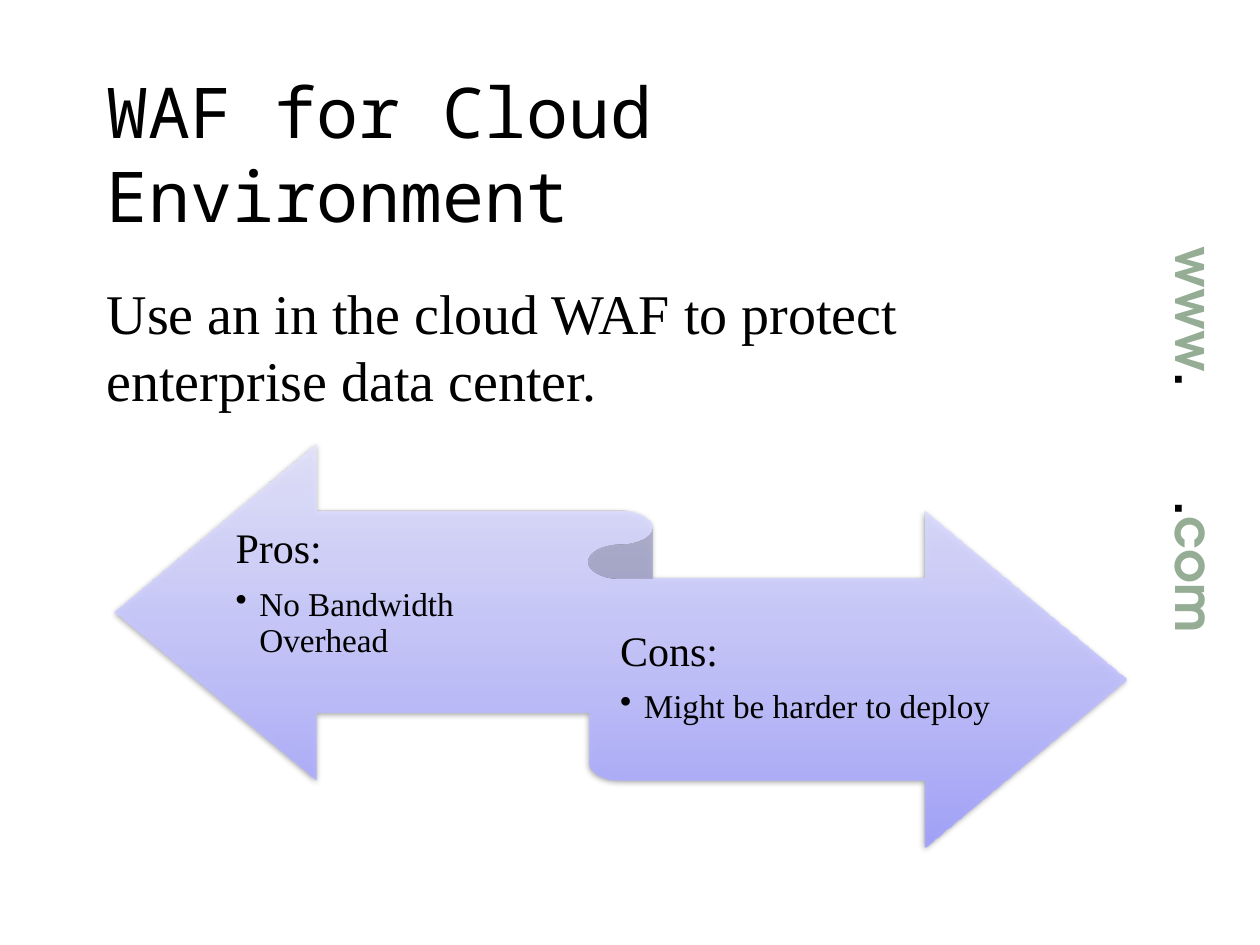
from lxml import etree
from pptx import Presentation
from pptx import util as u
from pptx.dml import color
from pptx.enum import shapes, text
from pptx.oxml import ns, parse_xml

COLOURS = {"ink": "000000", "site": "95AD95",
           "deep": "9F9FFF", "middle": "BBBBFF", "pale": "E5E5FF"}
SERIF = "Times New Roman"
INSET = (0.25, 0.13, 0.25, 0.13)


def style(font, name, size, colour="ink", bold=False):
    font.name, font.size, font.bold = name, u.Pt(size), bold
    font.color.rgb = color.RGBColor.from_string(COLOURS[colour])


def add_box(page, left, top, width, height, inset=INSET, anchor="TOP"):
    box = page.shapes.add_textbox(*map(u.Cm, (left, top, width, height)))
    frame = box.text_frame
    frame.word_wrap = True
    frame.vertical_anchor = getattr(text.MSO_ANCHOR, anchor)
    (frame.margin_left, frame.margin_top,
     frame.margin_right, frame.margin_bottom) = map(u.Cm, inset)
    return box


def add_text(page, words, place, font, size, **options):
    para = add_box(page, *place, **options).text_frame.paragraphs[0]
    para.text = words
    style(para.font, font, size)


def add_site_name(page):
    """Vertical web address; a tab stop makes the gap between its dots."""
    box = add_box(page, 19.81, 8.26, 8.61, 1.52)
    box.rotation = 90
    para = box.text_frame.paragraphs[0]
    tabs = etree.SubElement(para._p.get_or_add_pPr(), ns.qn("a:tabLst"))
    etree.SubElement(tabs, ns.qn("a:tab"), pos=str(u.Cm(5.15)), algn="l")
    for words, colour in (("www", "site"), (".\t.", "ink"), ("com", "site")):
        span = para.add_run()
        span.text = words
        style(span.font, "TeX Gyre Adventor", 30, colour, bold=True)


def add_ribbon(page, left, top, width, height):
    ribbon = page.shapes.add_shape(shapes.MSO_SHAPE.LEFT_RIGHT_RIBBON,
                                   *map(u.Cm, (left, top, width, height)))
    ribbon.line.fill.background()
    # Three-stop translucent gradient, dark at the bottom
    stops = "".join(
        f'<a:gs pos="{place * 1000}"><a:srgbClr val="{COLOURS[name]}">'
        '<a:alpha val="90000"/></a:srgbClr></a:gs>'
        for place, name in ((0, "deep"), (35, "middle"), (100, "pale")))
    fill = parse_xml(f'<a:gradFill {ns.nsdecls("a")}><a:gsLst>{stops}</a:gsLst>'
                     '<a:lin ang="16200000" scaled="0"/></a:gradFill>')
    properties = ribbon._element.spPr
    properties.find(ns.qn("a:prstGeom")).addnext(fill)
    # Soft shadow below
    properties.append(parse_xml(
        f'<a:effectLst {ns.nsdecls("a")}><a:outerShdw blurRad="{u.Pt(3.1)}" '
        f'dist="{u.Pt(1.6)}" dir="5400000" rotWithShape="0">'
        f'<a:srgbClr val="{COLOURS["ink"]}"><a:alpha val="38000"/></a:srgbClr>'
        '</a:outerShdw></a:effectLst>'))


def add_side(page, heading, point, place, bottom):
    """Heading with one bulleted point, on one half of the ribbon."""
    frame = add_box(page, *place, inset=(0, 0.23, 0, bottom),
                    anchor="MIDDLE").text_frame
    title, item = frame.paragraphs[0], frame.add_paragraph()
    item.level = 1
    properties = item._p.get_or_add_pPr()
    properties.set("marL", str(u.Cm(0.48)))
    properties.set("indent", str(u.Cm(-0.48)))
    etree.SubElement(properties, ns.qn("a:buChar"), char="•")
    for para, words, size, after in ((title, heading, 24, 8.4),
                                     (item, point, 19, 2.85)):
        para.text = words
        para.line_spacing = 0.9
        para.space_after = u.Pt(after)
        style(para.font, SERIF, size)


def main():
    deck = Presentation()
    deck.slide_width, deck.slide_height = u.Cm(25.4), u.Cm(19.05)
    page = deck.slides.add_slide(deck.slide_layouts[6])

    # Site name, title and statement
    add_site_name(page)
    add_text(page, "WAF for Cloud Environment", (1.9, 2.13, 19.61, 1.9),
             "Noto Sans Mono", 40, anchor="MIDDLE")
    add_text(page, "Use an in the cloud WAF to protect enterprise data center.",
             (1.9, 5.33, 17.81, 3), SERIF, 32, inset=(0.25, 0.28, 0.25, 0.13))

    # Pros and cons on a two-way ribbon
    add_ribbon(page, 2.31, 8.94, 20.4, 8.15)
    add_side(page, "Pros:", "No Bandwidth Overhead",
             (4.75, 10.39, 6.73, 3.99), bottom=1.07)
    add_side(page, "Cons:", "Might be harder to deploy",
             (12.5, 11.68, 7.95, 3.99), bottom=0.25)

    deck.save("out.pptx")


if __name__ == "__main__":
    main()
